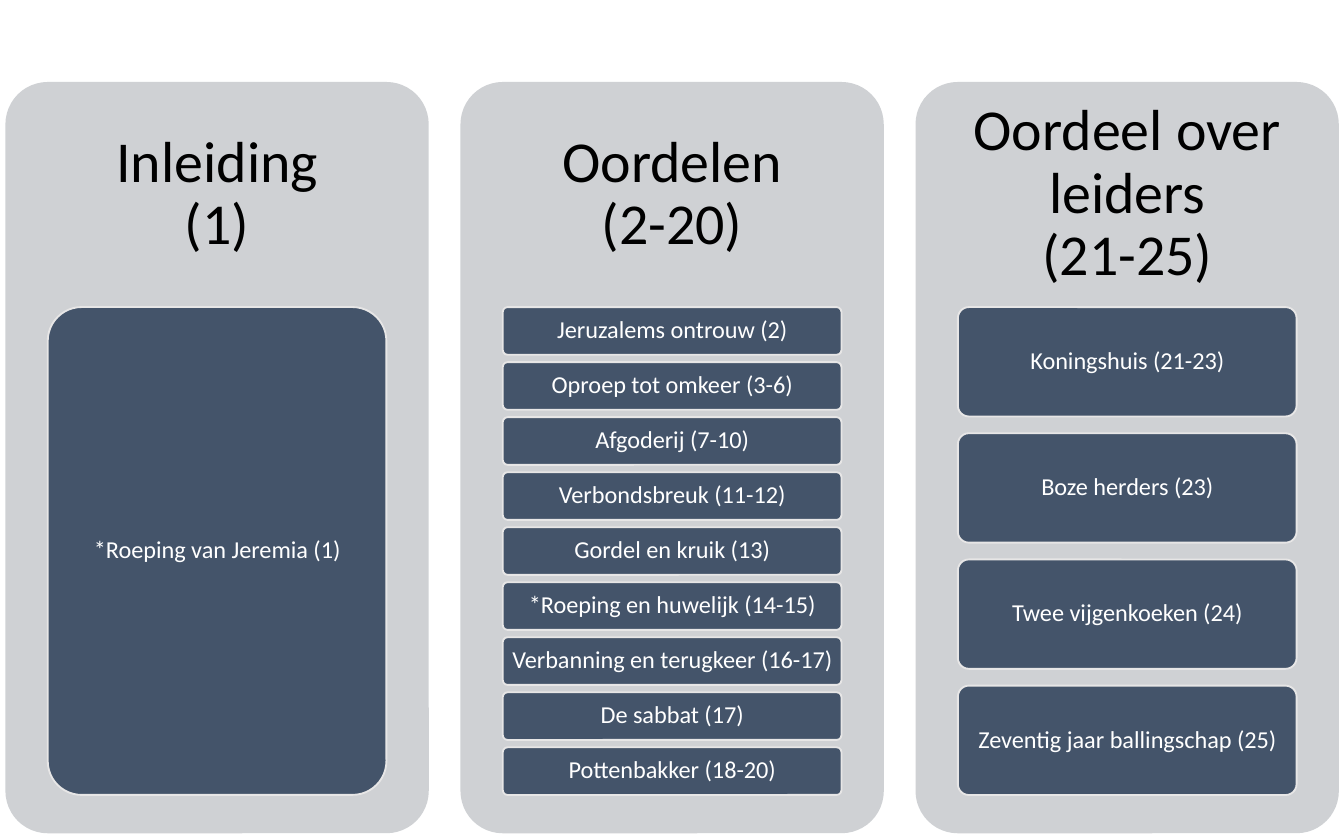
"""Build a three-column overview of Jeremia 1-25."""
from pptx import Presentation
from pptx.dml.color import RGBColor
from pptx.enum.shapes import MSO_SHAPE
from pptx.enum.text import MSO_ANCHOR, PP_ALIGN
from pptx.util import Inches, Pt

ROUNDED = MSO_SHAPE.ROUNDED_RECTANGLE
MIDDLE = MSO_ANCHOR.MIDDLE
CENTER = PP_ALIGN.CENTER

SECTIONS = [
    (("Inleiding", "(1)"), ["*Roeping van Jeremia (1)"]),
    (("Oordelen", "(2-20)"), [
        "Jeruzalems ontrouw (2)",
        "Oproep tot omkeer (3-6)",
        "Afgoderij (7-10)",
        "Verbondsbreuk (11-12)",
        "Gordel en kruik (13)",
        "*Roeping en huwelijk (14-15)",
        "Verbanning en terugkeer (16-17)",
        "De sabbat (17)",
        "Pottenbakker (18-20)",
    ]),
    (("Oordeel over leiders", "(21-25)"), [
        "Koningshuis (21-23)",
        "Boze herders (23)",
        "Twee vijgenkoeken (24)",
        "Zeventig jaar ballingschap (25)",
    ]),
]

FONT = "Calibri"
PANEL, TOPIC, EDGE = "CFD1D4", "44546A", "E7E6E6"
BLACK, WHITE = "000000", "FFFFFF"
PANEL_LEFT, PANEL_TOP, PANEL_WIDTH, PANEL_HEIGHT = 0.04, 0.61, 3.15, 5.59
PANEL_PITCH = 3.386
HEADING_HEIGHT = 0.3 * PANEL_HEIGHT
TOPIC_WIDTH = 0.8 * PANEL_WIDTH
TOPICS_TOP, TOPICS_HEIGHT = 2.285, 3.63
GAP_RATIO = 2 / 13


def color(value):
    return RGBColor.from_string(value)


def add_block(slide, box, fill, edge=None):
    block = slide.shapes.add_shape(ROUNDED, *map(Inches, box))
    block.adjustments[0] = 0.1
    block.shadow.inherit = False
    block.fill.solid()
    block.fill.fore_color.rgb = color(fill)
    if edge:
        block.line.color.rgb = color(edge)
        block.line.width = Pt(1)
    else:
        block.line.fill.background()
    return block


def write(shape, lines, size, ink, inset_x, inset_y):
    frame = shape.text_frame
    frame.word_wrap = True
    frame.vertical_anchor = MIDDLE
    frame.margin_left = frame.margin_right = Inches(inset_x)
    frame.margin_top = frame.margin_bottom = Inches(inset_y)
    paragraph = frame.paragraphs[0]
    paragraph.alignment = CENTER
    paragraph.line_spacing = 0.9
    for index, line in enumerate(lines):
        if index:
            paragraph.add_line_break()
        run = paragraph.add_run()
        run.text = line
        run.font.name = FONT
        run.font.size = Pt(size)
        run.font.color.rgb = color(ink)


def add_section(slide, left, heading, topics):
    add_block(slide, (left, PANEL_TOP, PANEL_WIDTH, PANEL_HEIGHT), PANEL)
    title = slide.shapes.add_textbox(
        *map(Inches, (left, PANEL_TOP, PANEL_WIDTH, HEADING_HEIGHT)))
    write(title, heading, 31, BLACK, 0.13, 0.13)

    count = len(topics)
    height = TOPICS_HEIGHT / (count + (count - 1) * GAP_RATIO)
    topic_left = left + (PANEL_WIDTH - TOPIC_WIDTH) / 2
    for row, topic in enumerate(topics):
        top = TOPICS_TOP + row * height * (1 + GAP_RATIO)
        block = add_block(slide, (topic_left, top, TOPIC_WIDTH, height), TOPIC, EDGE)
        write(block, [topic], 13, WHITE, 0.04, 0.03)


def main():
    deck = Presentation()
    deck.slide_width, deck.slide_height = Inches(10), Inches(6.25)
    slide = deck.slides.add_slide(deck.slide_layouts[6])
    for column, (heading, topics) in enumerate(SECTIONS):
        add_section(slide, PANEL_LEFT + column * PANEL_PITCH, heading, topics)
    deck.save("out.pptx")


if __name__ == "__main__":
    main()
